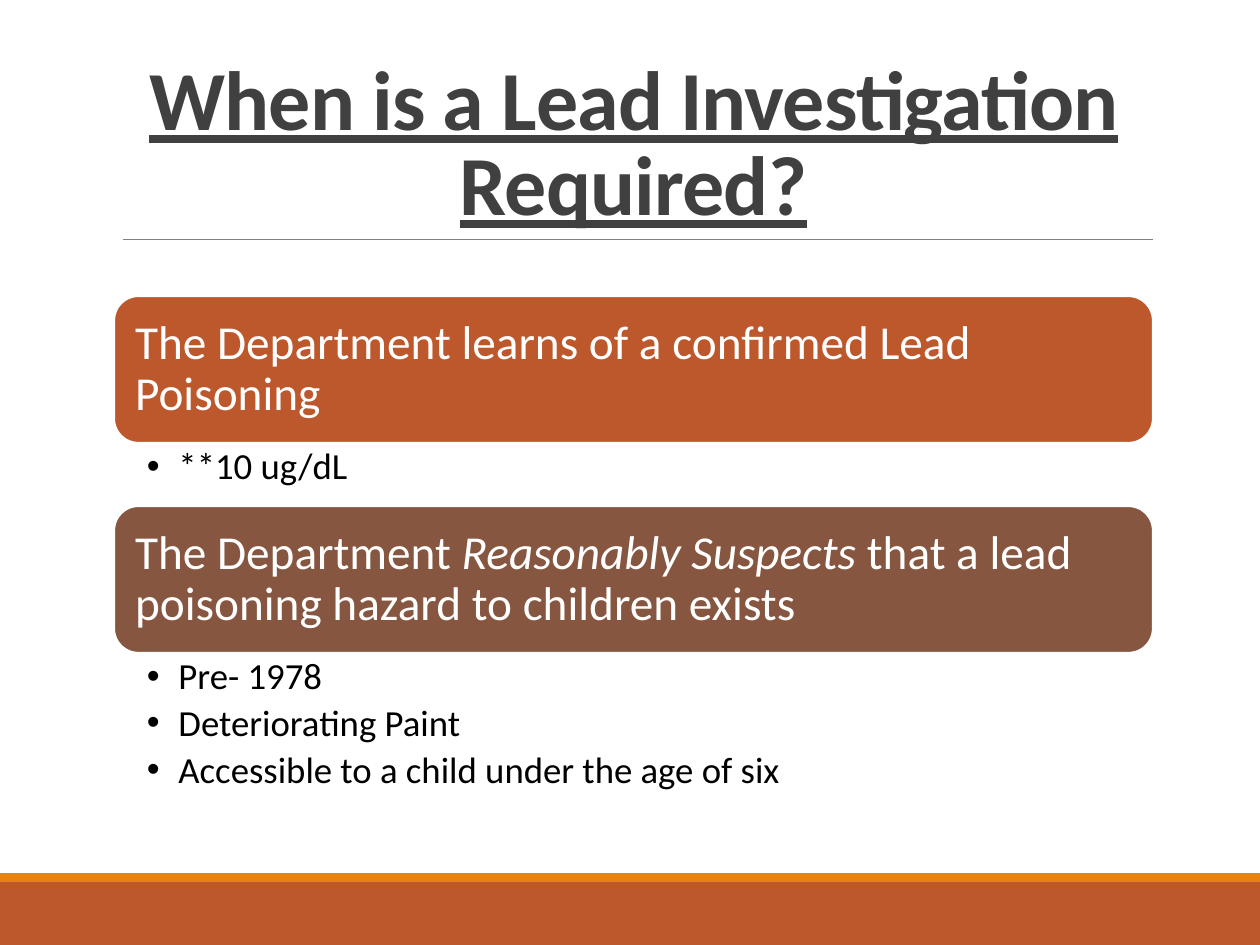
from dataclasses import dataclass

from lxml.etree import SubElement as Sub
from pptx import Presentation as Deck
from pptx.dml.color import RGBColor as Rgb
from pptx.enum.shapes import MSO_CONNECTOR as Link, MSO_SHAPE as Kind
from pptx.enum.text import MSO_ANCHOR as Anchor, PP_ALIGN as Align
from pptx.oxml.ns import qn
from pptx.util import Pt

PX = 914400 / 126
WIDE, HIGH = 1260, 945
LEFT, SPAN = 114, 1039
TOP, HEAD = 296, 147
FONT = "Calibri"


@dataclass
class Topic:
    words: list[str]
    fill: str
    points: list[str]
    room: int


@dataclass
class Band:
    top: int
    high: int
    fill: str


BANDS = [Band(882, 63, "BD582C"), Band(873, 9, "E48312")]
TOPICS = [
    Topic(["The Department learns of a confirmed Lead Poisoning"],
          "BD582C", ["**10 ug/dL"], 63),
    Topic(["The Department ", "Reasonably Suspects",
           " that a lead poisoning hazard to children exists"],
          "865640",
          ["Pre- 1978", "Deteriorating Paint",
           "Accessible to a child under the age of six"], 150),
]


def emu(*vals: int) -> list[int]:
    return [round(val * PX) for val in vals]


def color(code: str) -> Rgb:
    return Rgb.from_string(code)


def inset(frame, left: int, top: int, right: int, base: int) -> None:
    frame.word_wrap = True
    (frame.margin_left, frame.margin_top,
     frame.margin_right, frame.margin_bottom) = emu(left, top, right, base)


def style(para, size: int, code: str, lines: float) -> None:
    para.line_spacing = lines
    for run in para.runs:
        run.font.name = FONT
        run.font.size = Pt(size)
        run.font.color.rgb = color(code)


def bullet(para) -> None:
    para.level = 1
    para.space_after = Pt(4)
    props = para._p.get_or_add_pPr()
    props.set("marL", "228600")
    props.set("indent", "-228600")
    Sub(props, qn("a:buFont")).set("typeface", "Arial")
    Sub(props, qn("a:buChar")).set("char", "•")


def block(slide, kind: Kind, box: list[int], fill: str):
    shape = slide.shapes.add_shape(kind, *box)
    shape.shadow.inherit = False
    shape.fill.solid()
    shape.fill.fore_color.rgb = color(fill)
    shape.line.fill.background()
    return shape


def title(slide, text: str) -> None:
    frame = slide.shapes.add_textbox(*emu(LEFT, 39, SPAN, 200)).text_frame
    inset(frame, 13, 6, 13, 6)
    frame.vertical_anchor = Anchor.BOTTOM
    frame.text = text
    para = frame.paragraphs[0]
    para.alignment = Align.CENTER
    style(para, 48, "404040", 0.85)
    run = para.runs[0]
    run.font.bold = run.font.underline = True
    run._r.get_or_add_rPr().set("spc", "-50")


def rule(slide) -> None:
    line = slide.shapes.add_connector(Link.STRAIGHT, *emu(123, 239, 1153, 239))
    line.line.color.rgb = color("808080")
    line.line.width = Pt(0.5)
    Sub(line._element.spPr, qn("a:effectLst"))


def head(slide, topic: Topic, top: int) -> None:
    shape = block(slide, Kind.ROUNDED_RECTANGLE,
                  emu(LEFT, top, SPAN, HEAD), topic.fill)
    shape.line.color.rgb = color("FFFFFF")
    shape.line.width = Pt(1.25)
    frame = shape.text_frame
    inset(frame, 14, 14, 14, 14)
    frame.vertical_anchor = Anchor.MIDDLE
    para = frame.paragraphs[0]
    para.alignment = Align.LEFT
    para.text = topic.words[0]
    for spot, words in enumerate(topic.words[1:], 1):
        run = para.add_run()
        run.text = words
        run.font.italic = spot % 2 == 1
    style(para, 27, "FFFFFF", 0.9)


def details(slide, topic: Topic, top: int) -> None:
    box = slide.shapes.add_textbox(*emu(LEFT, top, SPAN, topic.room))
    frame = box.text_frame
    inset(frame, 33, 5, 26, 5)
    frame.text = "\n".join(topic.points)
    for para in frame.paragraphs:
        style(para, 21, "000000", 0.9)
        bullet(para)


def main() -> None:
    deck = Deck()
    deck.slide_width, deck.slide_height = emu(WIDE, HIGH)
    slide = deck.slides.add_slide(deck.slide_layouts[6])
    for band in BANDS:
        block(slide, Kind.RECTANGLE,
              emu(0, band.top, WIDE, band.high), band.fill)
    rule(slide)
    title(slide, "When is a Lead Investigation Required?")
    top = TOP
    for topic in TOPICS:
        head(slide, topic, top)
        details(slide, topic, top + HEAD)
        top += HEAD + topic.room
    deck.save("out.pptx")


if __name__ == "__main__":
    main()
